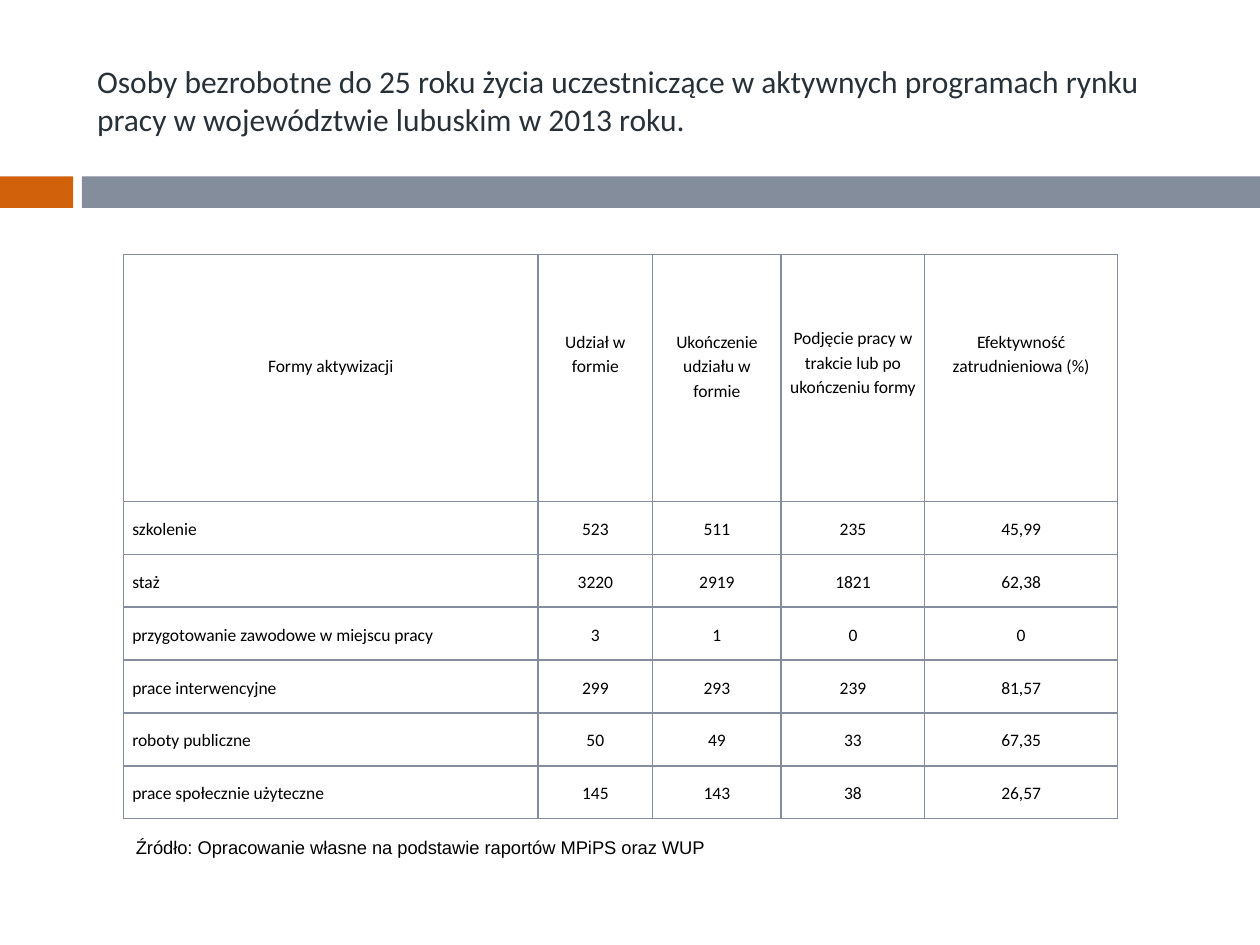
from dataclasses import dataclass

import pptx
import pptx.dml.color
import pptx.enum.shapes
import pptx.enum.text
import pptx.oxml
import pptx.oxml.ns
import pptx.util

Inches = pptx.util.Inches
Pt = pptx.util.Pt
RGBColor = pptx.dml.color.RGBColor
Align = pptx.enum.text.PP_ALIGN
Anchor = pptx.enum.text.MSO_ANCHOR

ORANGE = RGBColor(0xD2, 0x61, 0x0C)
GREY = RGBColor(0x83, 0x8D, 0x9B)
SLATE = RGBColor(0x28, 0x31, 0x38)
BLACK = RGBColor(0, 0, 0)


@dataclass(frozen=True)
class Band:
    left: float
    width: float
    color: RGBColor


@dataclass(frozen=True)
class Column:
    heading: str
    width: float
    heading_offset: float
    align: Align = Align.CENTER


BANDS = [Band(0, 0.58, ORANGE), Band(0.65, 9.35, GREY)]
COLUMNS = [
    Column("Formy aktywizacji", 3.29, 0.78, Align.LEFT),
    Column("Udział w formie", 0.91, 0.59),
    Column("Ukończenie udziału w formie", 1.02, 0.59),
    Column("Podjęcie pracy w trakcie lub po ukończeniu formy", 1.14, 0.56),
    Column("Efektywność zatrudnieniowa (%)", 1.53, 0.59),
]
ROWS = [
    ("szkolenie", "523", "511", "235", "45,99"),
    ("staż", "3220", "2919", "1821", "62,38"),
    ("przygotowanie zawodowe w miejscu pracy", "3", "1", "0", "0"),
    ("prace interwencyjne", "299", "293", "239", "81,57"),
    ("roboty publiczne", "50", "49", "33", "67,35"),
    ("prace społecznie użyteczne", "145", "143", "38", "26,57"),
]
HEADING_HEIGHT = 1.96
ROW_HEIGHT = 0.42


def write_text(frame, text: str, *, size: float, font: str = "Calibri",
               color: RGBColor = BLACK, align: Align = Align.LEFT,
               line_spacing: float = 1.0) -> None:
    paragraph = frame.paragraphs[0]
    paragraph.alignment = align
    paragraph.line_spacing = line_spacing
    run = paragraph.add_run()
    run.text = text
    run.font.size = Pt(size)
    run.font.name = font
    run.font.color.rgb = color


def add_band(slide, band: Band) -> None:
    shape = slide.shapes.add_shape(
        pptx.enum.shapes.MSO_SHAPE.RECTANGLE,
        Inches(band.left), Inches(1.4), Inches(band.width), Inches(0.25))
    shape.shadow.inherit = False
    shape.fill.solid()
    shape.fill.fore_color.rgb = band.color
    shape.line.fill.background()


def add_borders(cell) -> None:
    properties = cell._tc.get_or_add_tcPr()
    namespace = pptx.oxml.ns.nsdecls("a")
    for index, side in enumerate(("lnL", "lnR", "lnT", "lnB")):
        properties.insert(index, pptx.oxml.parse_xml(
            f'<a:{side} {namespace} w="{Pt(1)}"><a:solidFill>'
            f'<a:srgbClr val="{GREY}"/></a:solidFill></a:{side}>'))


def fill_cell(cell, text: str, align: Align, anchor: Anchor,
              top: float = 0) -> None:
    cell.fill.background()
    cell.margin_left = cell.margin_right = Inches(0.07)
    cell.margin_top = Inches(top)
    cell.margin_bottom = 0
    cell.vertical_anchor = anchor
    write_text(cell.text_frame, text, size=10, align=align, line_spacing=1.15)
    add_borders(cell)


def add_programme_table(slide) -> None:
    height = HEADING_HEIGHT + ROW_HEIGHT * len(ROWS)
    width = sum(column.width for column in COLUMNS)
    table = slide.shapes.add_table(
        len(ROWS) + 1, len(COLUMNS), Inches(0.98), Inches(2.02),
        Inches(width), Inches(height)).table
    table.first_row = table.horz_banding = False
    table.rows[0].height = Inches(HEADING_HEIGHT)
    for index, column in enumerate(COLUMNS):
        table.columns[index].width = Inches(column.width)
        fill_cell(table.cell(0, index), column.heading, Align.CENTER,
                  Anchor.TOP, column.heading_offset)
    for row_index, values in enumerate(ROWS, start=1):
        table.rows[row_index].height = Inches(ROW_HEIGHT)
        for index, (column, value) in enumerate(zip(COLUMNS, values)):
            fill_cell(table.cell(row_index, index), value, column.align,
                      Anchor.MIDDLE)


def main() -> None:
    presentation = pptx.Presentation()
    presentation.slide_width = Inches(10)
    presentation.slide_height = Inches(7.5)
    slide = presentation.slides.add_slide(presentation.slide_layouts[5])

    for band in BANDS:
        add_band(slide, band)

    title = slide.shapes.title
    title.left, title.top = Inches(0.67), Inches(0.25)
    title.width, title.height = Inches(8.92), Inches(1.08)
    title.text_frame.vertical_anchor = Anchor.MIDDLE
    write_text(title.text_frame,
               "Osoby bezrobotne do 25 roku życia uczestniczące w aktywnych "
               "programach rynku pracy w województwie lubuskim w 2013 roku.",
               size=18, color=SLATE)

    add_programme_table(slide)

    source = slide.shapes.add_textbox(
        Inches(0.98), Inches(6.59), Inches(4.8), Inches(0.28))
    source.text_frame.word_wrap = False
    write_text(source.text_frame,
               "Źródło: Opracowanie własne na podstawie raportów MPiPS oraz WUP",
               size=10.5, font="Arial")

    presentation.save("out.pptx")


if __name__ == "__main__":
    main()
